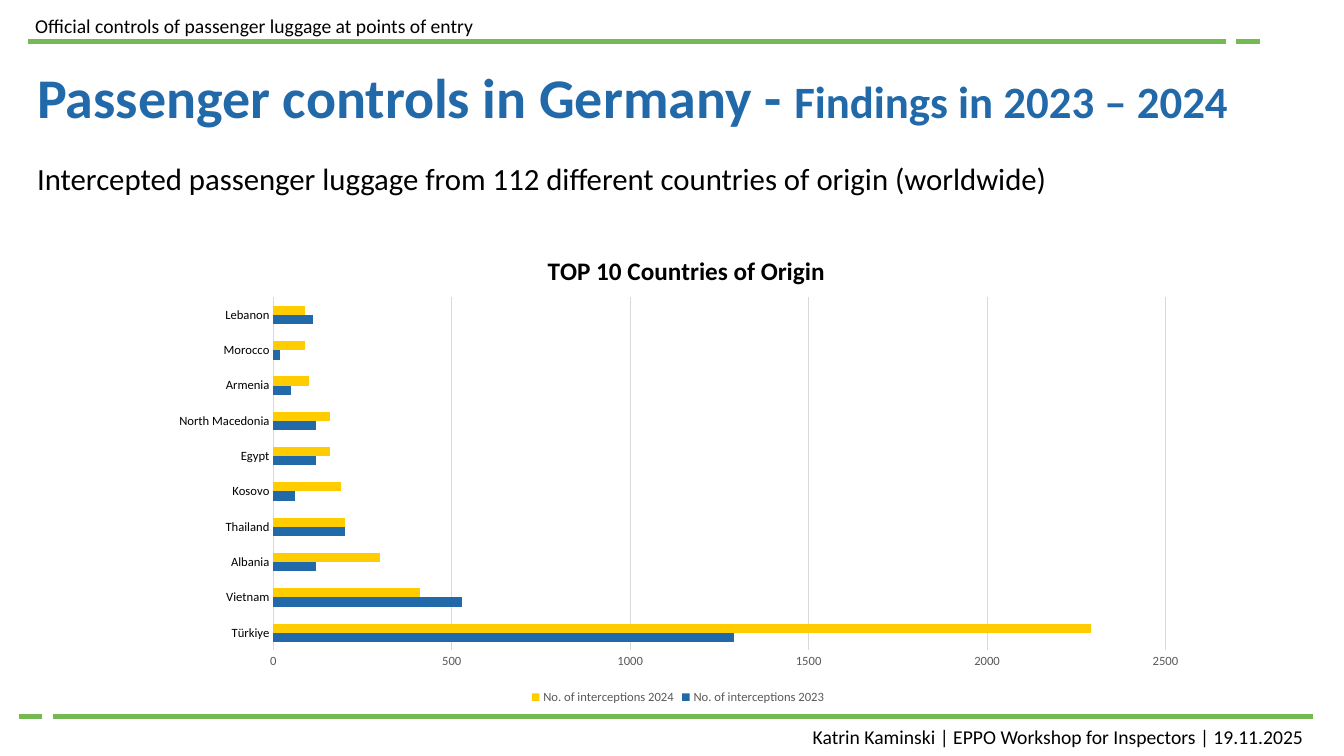
from lxml import etree
from pptx import Presentation
from pptx.chart.data import CategoryChartData
from pptx.dml.color import RGBColor
from pptx.enum.chart import XL_CHART_TYPE, XL_LEGEND_POSITION, XL_TICK_MARK
from pptx.enum.shapes import MSO_CONNECTOR
from pptx.enum.text import MSO_ANCHOR, PP_ALIGN
from pptx.oxml import parse_xml
from pptx.oxml.ns import nsdecls, qn
from pptx.util import Inches, Pt

BAR = XL_CHART_TYPE.BAR_CLUSTERED
BOTTOM = XL_LEGEND_POSITION.BOTTOM
NO_TICK = XL_TICK_MARK.NONE
STRAIGHT = MSO_CONNECTOR.STRAIGHT
TOP = MSO_ANCHOR.TOP
LEFT, RIGHT = PP_ALIGN.LEFT, PP_ALIGN.RIGHT

GREEN = RGBColor(0x75, 0xB9, 0x52)
BLUE = RGBColor(0x22, 0x69, 0xAA)
YELLOW = RGBColor(0xFF, 0xCC, 0x00)
BLACK = RGBColor(0, 0, 0)
GREY = RGBColor(0x59, 0x59, 0x59)
PALE = RGBColor(0xD9, 0xD9, 0xD9)

COUNTRIES = ["Türkiye", "Vietnam", "Albania", "Thailand", "Kosovo", "Egypt",
             "North Macedonia", "Armenia", "Morocco", "Lebanon"]
INTERCEPTIONS = [
    ("No. of interceptions 2023", BLUE,
     [1290, 530, 120, 200, 60, 120, 120, 50, 20, 110]),
    ("No. of interceptions 2024", YELLOW,
     [2290, 410, 300, 200, 190, 160, 160, 100, 90, 90]),
]


class Deck:
    font = "Calibri"

    def __init__(self, width, height):
        self.prs = Presentation()
        self.prs.slide_width = Inches(width)
        self.prs.slide_height = Inches(height)
        self.s = self.prs.slides.add_slide(self.prs.slide_layouts[6])

    def x(self, percent):
        return round(self.prs.slide_width * percent / 100)

    def y(self, percent):
        return round(self.prs.slide_height * percent / 100)

    def box(self, left, top, width, height):
        return self.x(left), self.y(top), self.x(width), self.y(height)

    def style(self, font, size, color, bold=False):
        formats = {"name": self.font, "size": Pt(size), "bold": bold}
        for name, value in formats.items():
            setattr(font, name, value)
        font.color.rgb = color

    def rule(self, start, end, y):
        c = self.s.shapes.add_connector(
            STRAIGHT, self.x(start), self.y(y), self.x(end), self.y(y))
        c.line.color.rgb = GREEN
        c.line.width = Pt(3.25)
        etree.SubElement(c._element.spPr, qn("a:effectLst"))

    def text(self, at, runs, color=BLACK, bold=False, align=LEFT, spacing=1.0):
        tf = self.s.shapes.add_textbox(*self.box(*at)).text_frame
        tf.word_wrap = True
        tf.vertical_anchor = TOP
        p = tf.paragraphs[0]
        p.alignment = align
        p.line_spacing = spacing
        for words, size in runs:
            r = p.add_run()
            r.text = words
            self.style(r.font, size, color, bold)

    def layout(self, parent, before, target="", **shares):
        old = parent.find(qn("c:layout"))
        if old is not None:
            parent.remove(old)
        modes = '<c:xMode val="edge"/><c:yMode val="edge"/>'
        sizes = "".join(f'<c:{k} val="{v}"/>' for k, v in shares.items())
        parent.find(qn(before)).addprevious(parse_xml(
            f'<c:layout {nsdecls("c")}><c:manualLayout>{target}{modes}{sizes}'
            '</c:manualLayout></c:layout>'))

    def bar_chart(self, at, title, categories, series):
        data = CategoryChartData()
        data.categories = categories
        for name, _, values in series:
            data.add_series(name, values)
        chart = self.s.shapes.add_chart(BAR, *self.box(*at), data).chart
        self.style(chart.font, 10, BLACK)

        tf = chart.chart_title.text_frame
        tf.text = title
        self.style(tf.paragraphs[0].runs[0].font, 18, BLACK, True)
        chart.chart_title.include_in_layout = False
        self.layout(chart.chart_title._element, "c:overlay", x=0.37, y=0.05)

        plot = chart.plots[0]
        for name, value in {"gap_width": 182, "overlap": 0,
                            "vary_by_categories": False}.items():
            setattr(plot, name, value)
        for bars, (_, color, _) in zip(plot.series, series):
            bars.format.fill.solid()
            bars.format.fill.fore_color.rgb = color
        self.layout(chart._chartSpace.chart.plotArea, "c:barChart",
                    '<c:layoutTarget val="inner"/>',
                    x=0.11, y=0.15, w=0.86, h=0.73)

        cat, val = chart.category_axis, chart.value_axis
        for axis, color in ((cat, BLACK), (val, GREY)):
            axis.major_tick_mark = axis.minor_tick_mark = NO_TICK
            self.style(axis.tick_labels.font, 9, color)
        for name, value in {"minimum_scale": 0, "maximum_scale": 2500,
                            "major_unit": 500}.items():
            setattr(val, name, value)
        val.format.line.fill.background()
        for line in (cat.format.line, val.major_gridlines.format.line):
            line.color.rgb = PALE
            line.width = Pt(0.75)

        chart.has_legend = True
        chart.legend.position = BOTTOM
        chart.legend.include_in_layout = False
        self.style(chart.legend.font, 9, GREY)


def main():
    deck = Deck(13.33, 7.5)
    for start, end, y in ((2.1, 91.2, 5.47), (91.97, 93.77, 5.47),
                          (3.98, 97.67, 94.8), (1.43, 3.15, 94.8)):
        deck.rule(start, end, y)
    deck.text((1.88, 1.6, 89.35, 3.2),
              [("Official controls of passenger luggage at points of entry", 14)],
              spacing=0.9)
    deck.text((2.03, 7.6, 95.95, 19.33),
              [("Passenger controls in Germany - ", 40),
               ("Findings in 2023 – 2024", 32)], BLUE, True)
    deck.text((2.03, 20.53, 91.67, 6.27),
              [("Intercepted passenger luggage from 112 different countries "
                "of origin (worldwide)", 22)])
    deck.bar_chart((11.85, 29.73, 77.19, 64), "TOP 10 Countries of Origin",
                   COUNTRIES, INTERCEPTIONS)
    deck.text((4.28, 95.6, 93.47, 3.47),
              [("Katrin Kaminski | EPPO Workshop for Inspectors | 19.11.2025", 14)],
              align=RIGHT, spacing=0.9)
    deck.prs.save("out.pptx")


if __name__ == "__main__":
    main()
